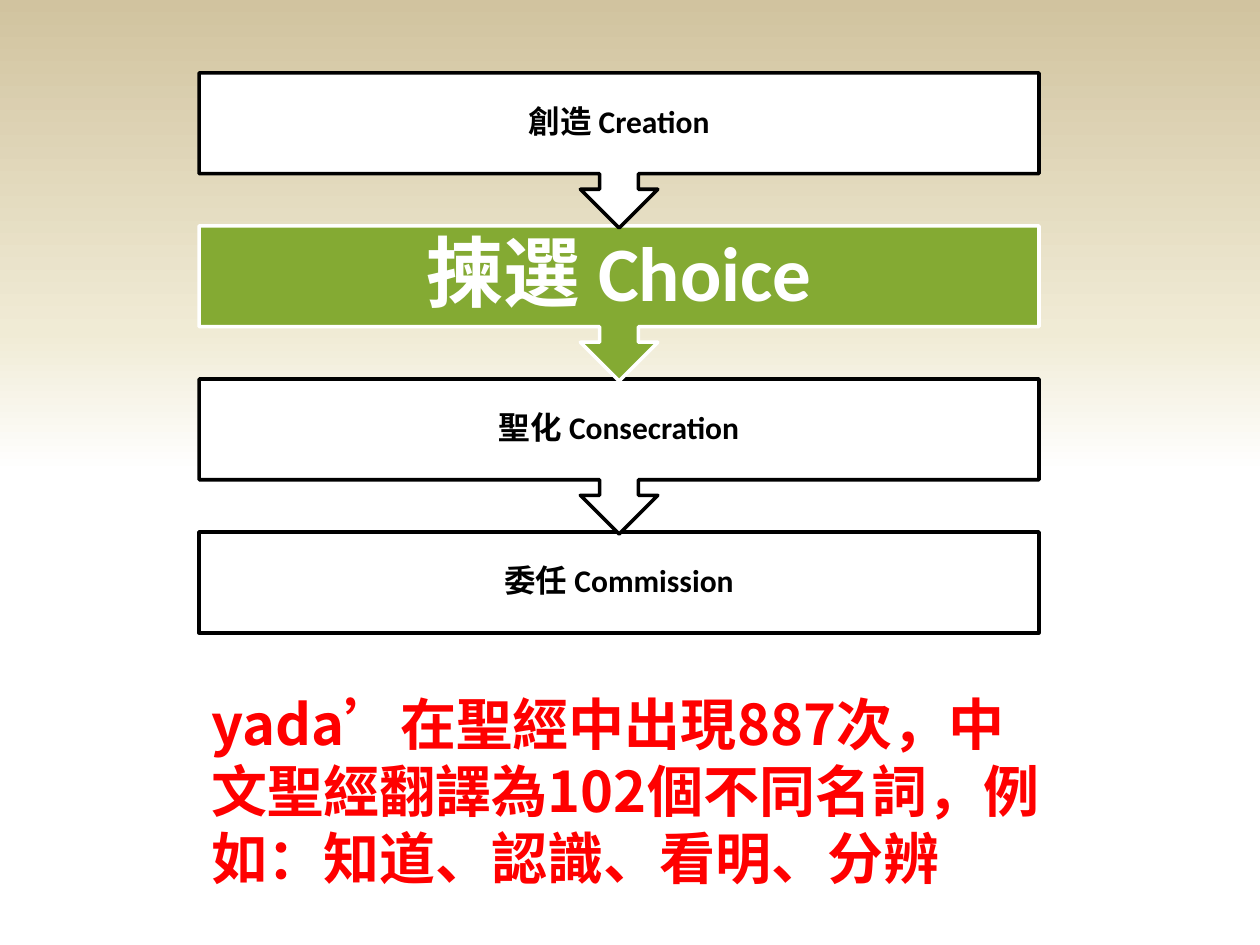
from lxml import etree
from pptx import Presentation
from pptx import util as u
from pptx.dml.color import RGBColor
from pptx.enum import shapes, text
from pptx.oxml.ns import qn

BLACK = RGBColor(0x00, 0x00, 0x00)
WHITE = RGBColor(0xFF, 0xFF, 0xFF)
GREEN = RGBColor(0x84, 0xAA, 0x33)
RED = RGBColor(0xFF, 0x00, 0x00)
CREAM = RGBColor(0xF0, 0xEB, 0xD5)
TAN = RGBColor(0xD1, 0xC3, 0x9F)

BACKGROUND_STOPS = [(50, WHITE), (65, CREAM), (100, TAN)]
PLAIN = dict(fill=WHITE, ink=BLACK, size=18, inset=18)
CHOSEN = dict(fill=GREEN, ink=WHITE, size=44, inset=43)
STEPS = [
    ("創造 Creation", PLAIN),
    ("揀選 Choice", CHOSEN),
    ("聖化 Consecration", PLAIN),
    ("委任 Commission", PLAIN),
]
NOTE = "yada’在聖經中出現887次，中文聖經翻譯為102個不同名詞，例如：知道、認識、看明、分辨"

LEFT, TOP, WIDTH, PITCH = 199, 73, 840, 153
BOX_HEIGHT, CALLOUT_HEIGHT = 101, 155
NOTE_TOP, NOTE_WIDTH, NOTE_HEIGHT = 683, 860, 217


def px(length):
    return u.Emu(round(length * 914400 / 126))


def paint_background(slide):
    fill = slide.background.fill
    fill.gradient()
    fill.gradient_angle = 90
    stops = slide.element.find(".//" + qn("a:gsLst"))
    for stop in list(stops):
        stops.remove(stop)
    for position, color in BACKGROUND_STOPS:
        stop = etree.SubElement(stops, qn("a:gs"), pos=str(position * 1000))
        etree.SubElement(stop, qn("a:srgbClr"), val=str(color))


def add_text(slide, box, words, font, size, color):
    frame = slide.shapes.add_textbox(*map(px, box)).text_frame
    frame.word_wrap = True
    paragraph = frame.paragraphs[0]
    run = paragraph.add_run()
    run.text = words
    run.font.name = font
    run.font.size = u.Pt(size)
    run.font.bold = True
    run.font.color.rgb = color
    return frame, paragraph, run


def add_step(slide, index, words, style):
    top = TOP + index * PITCH
    last = index == len(STEPS) - 1
    kind = shapes.MSO_SHAPE.RECTANGLE if last else shapes.MSO_SHAPE.UP_ARROW_CALLOUT
    height = BOX_HEIGHT if last else CALLOUT_HEIGHT
    shape = slide.shapes.add_shape(kind, *map(px, (LEFT, top, WIDTH, height)))
    shape.rotation = 0 if last else 180
    shape.shadow.inherit = False
    shape.fill.solid()
    shape.fill.fore_color.rgb = style["fill"]
    shape.line.color.rgb = style["ink"]
    shape.line.width = u.Pt(2)

    frame, paragraph, _ = add_text(
        slide, (LEFT, top, WIDTH, BOX_HEIGHT), words, "Calibri", style["size"], style["ink"])
    frame.vertical_anchor = text.MSO_ANCHOR.MIDDLE
    frame.margin_left = frame.margin_right = px(style["inset"])
    frame.margin_top = frame.margin_bottom = px(style["inset"])
    paragraph.alignment = text.PP_ALIGN.CENTER
    paragraph.line_spacing = 0.9


def add_note(slide):
    font = "Noto Sans CJK SC"
    frame, _, run = add_text(
        slide, (LEFT, NOTE_TOP, NOTE_WIDTH, NOTE_HEIGHT), NOTE, font, 32, RED)
    frame.auto_size = text.MSO_AUTO_SIZE.SHAPE_TO_FIT_TEXT
    etree.SubElement(run.font._element, qn("a:ea"), typeface=font)


def main():
    presentation = Presentation()
    presentation.slide_width = px(1260)
    presentation.slide_height = px(945)
    slide = presentation.slides.add_slide(presentation.slide_layouts[6])
    paint_background(slide)
    for index, (words, style) in reversed(list(enumerate(STEPS))):
        add_step(slide, index, words, style)
    add_note(slide)
    presentation.save("out.pptx")


if __name__ == "__main__":
    main()
